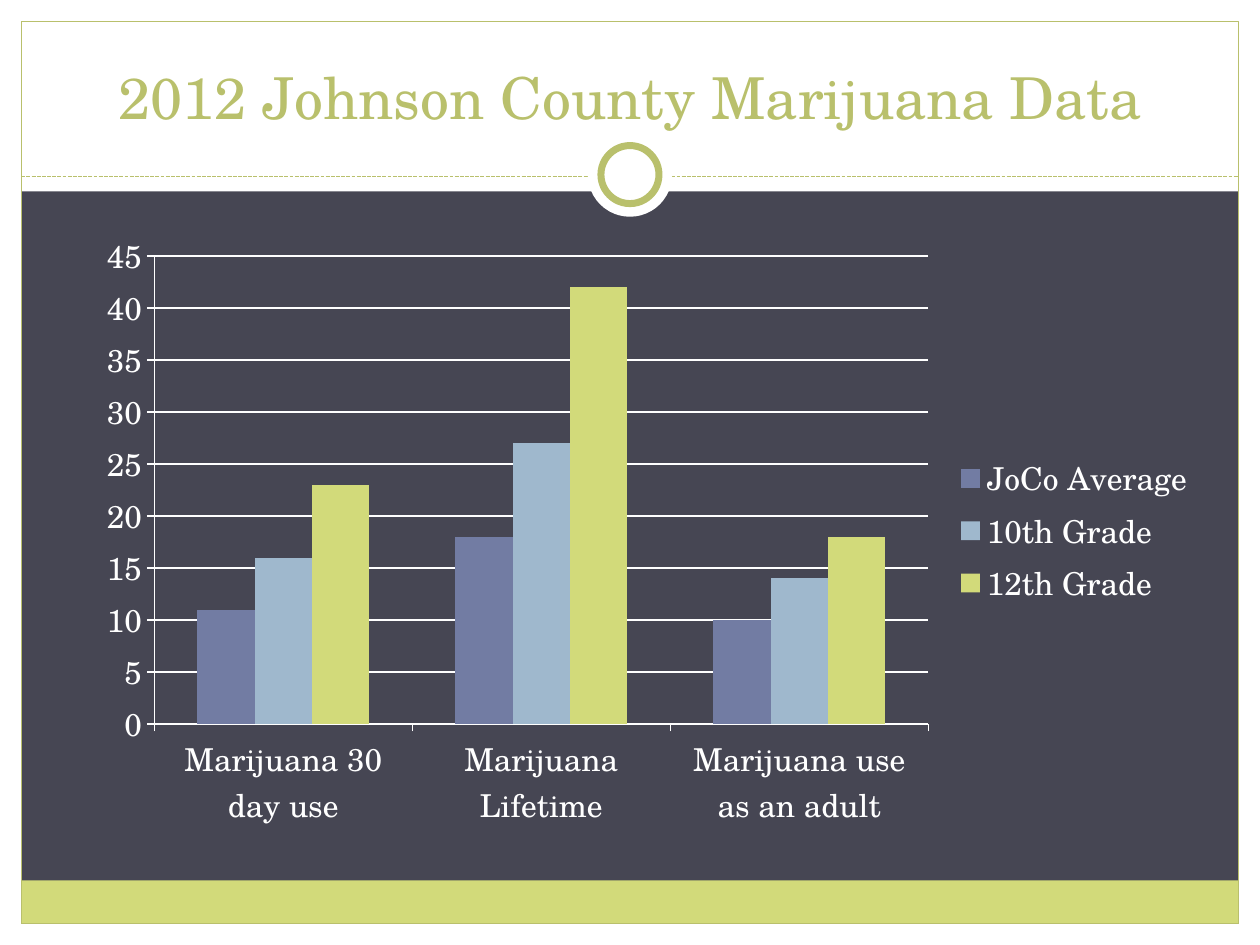
import pptx
import pptx.chart.data
import pptx.dml.color
import pptx.enum.chart
import pptx.enum.dml
import pptx.enum.shapes
import pptx.enum.text
import pptx.oxml.ns
import pptx.util
import lxml.etree

Cm = pptx.util.Cm
Pt = pptx.util.Pt
MSO_SHAPE = pptx.enum.shapes.MSO_SHAPE

FONT = "TeX Gyre Schola"
WHITE, SLATE, OLIVE, LIME = "FFFFFF", "464653", "B9C06C", "D2DA7A"
WIDTH, HEIGHT, MARGIN = 25.4, 19.05, 0.43
HEADER_HEIGHT = 3.86

CATEGORIES = ["Marijuana 30 day use", "Marijuana Lifetime", "Marijuana use as an adult"]
SERIES = [
    ("JoCo Average", (11, 18, 10), "727CA3"),
    ("10th Grade", (16, 27, 14), "9FB8CD"),
    ("12th Grade", (23, 42, 18), LIME),
]


def paint(color_format, color):
    """Set a fill, line or font colour from a hex string."""
    if hasattr(color_format, "solid"):
        color_format.solid()
        color_format = color_format.fore_color
    color_format.rgb = pptx.dml.color.RGBColor.from_string(color)


def add_plain_shape(slide, kind, box, fill=None, line=None, line_width=0.75):
    shape = slide.shapes.add_shape(kind, *(Cm(length) for length in box))
    shape.shadow.inherit = False
    if fill:
        paint(shape.fill, fill)
    else:
        shape.fill.background()
    if line:
        paint(shape.line.color, line)
        shape.line.width = Pt(line_width)
    else:
        shape.line.fill.background()
    return shape


def add_frame(slide, box):
    """White margins, lime footer band and thin outline."""
    left, top, width, height = box
    bottom = top + height
    for strip in [
        (0, bottom, WIDTH, HEIGHT - bottom),
        (0, 0, WIDTH, HEADER_HEIGHT),
        (0, 0, left, HEIGHT),
        (left + width, 0, WIDTH - left - width, HEIGHT),
    ]:
        add_plain_shape(slide, MSO_SHAPE.RECTANGLE, strip, WHITE)
    footer_height = 0.87
    footer = (left, bottom - footer_height, width, footer_height)
    add_plain_shape(slide, MSO_SHAPE.RECTANGLE, footer, LIME)
    add_plain_shape(slide, MSO_SHAPE.RECTANGLE, box, line=OLIVE)


def add_divider(slide, box):
    """Dashed line across the box with a ring at its centre."""
    left, top, width, height = box
    line_y = top + 0.89
    connector = slide.shapes.add_connector(
        pptx.enum.shapes.MSO_CONNECTOR.STRAIGHT,
        Cm(left), Cm(line_y), Cm(left + width), Cm(line_y))
    paint(connector.line.color, OLIVE)
    connector.line.width = Pt(0.75)
    connector.line.dash_style = pptx.enum.dml.MSO_LINE.SQUARE_DOT
    lxml.etree.SubElement(connector._element.spPr, pptx.oxml.ns.qn("a:effectLst"))

    center_x, center_y = left + width / 2, top + height / 2
    for diameter, line in [(height, None), (1.17, OLIVE)]:
        circle = (center_x - diameter / 2, center_y - diameter / 2, diameter, diameter)
        add_plain_shape(slide, MSO_SHAPE.OVAL, circle, WHITE, line, line_width=4)


def place_title(slide, box, text):
    title = slide.shapes.title
    title.left, title.top, title.width, title.height = (Cm(length) for length in box)
    text_frame = title.text_frame
    text_frame.text = text
    text_frame.word_wrap = True
    text_frame.auto_size = pptx.enum.text.MSO_AUTO_SIZE.NONE
    text_frame.vertical_anchor = pptx.enum.text.MSO_ANCHOR.BOTTOM
    paragraph = text_frame.paragraphs[0]
    paragraph.alignment = pptx.enum.text.PP_ALIGN.CENTER
    font = paragraph.runs[0].font
    font.name, font.size = FONT, Pt(33)
    paint(font.color, OLIVE)
    # Bring the title in front of the white header
    slide.shapes._spTree.append(title._element)


def add_usage_chart(slide, box):
    chart_data = pptx.chart.data.CategoryChartData()
    chart_data.categories = CATEGORIES
    for name, values, _ in SERIES:
        chart_data.add_series(name, values)
    chart = slide.shapes.add_chart(
        pptx.enum.chart.XL_CHART_TYPE.COLUMN_CLUSTERED,
        *(Cm(length) for length in box), chart_data).chart
    chart.has_title = False
    chart.font.name, chart.font.size = FONT, Pt(18)
    paint(chart.font.color, WHITE)

    # Columns
    plot = chart.plots[0]
    plot.gap_width, plot.overlap = 150, 0
    plot.vary_by_categories = False
    for series, (_, _, color) in zip(plot.series, SERIES):
        paint(series.format.fill, color)

    # Axes and gridlines
    value_axis = chart.value_axis
    value_axis.minimum_scale, value_axis.maximum_scale, value_axis.major_unit = 0, 45, 5
    value_axis.has_major_gridlines = True
    for axis in (chart.category_axis, value_axis):
        axis.major_tick_mark = pptx.enum.chart.XL_TICK_MARK.OUTSIDE
    for lined in (chart.category_axis, value_axis, value_axis.major_gridlines):
        paint(lined.format.line.color, WHITE)
        lined.format.line.width = Pt(0.75)

    # Legend
    chart.has_legend = True
    chart.legend.position = pptx.enum.chart.XL_LEGEND_POSITION.RIGHT
    chart.legend.include_in_layout = False


def main():
    presentation = pptx.Presentation()
    presentation.slide_width, presentation.slide_height = Cm(WIDTH), Cm(HEIGHT)
    slide = presentation.slides.add_slide(presentation.slide_layouts[5])
    paint(slide.background.fill, SLATE)

    inner_width = WIDTH - 2 * MARGIN
    add_frame(slide, (MARGIN, MARGIN, inner_width, HEIGHT - 2 * MARGIN))
    add_divider(slide, (MARGIN, 2.67, inner_width, 1.7))
    place_title(slide, (0.84, 0.64, 23.72, 2.12), "2012 Johnson County Marijuana Data")
    add_usage_chart(slide, (1.7, 4.45, 22.65, 12.5))
    presentation.save("out.pptx")


if __name__ == "__main__":
    main()
